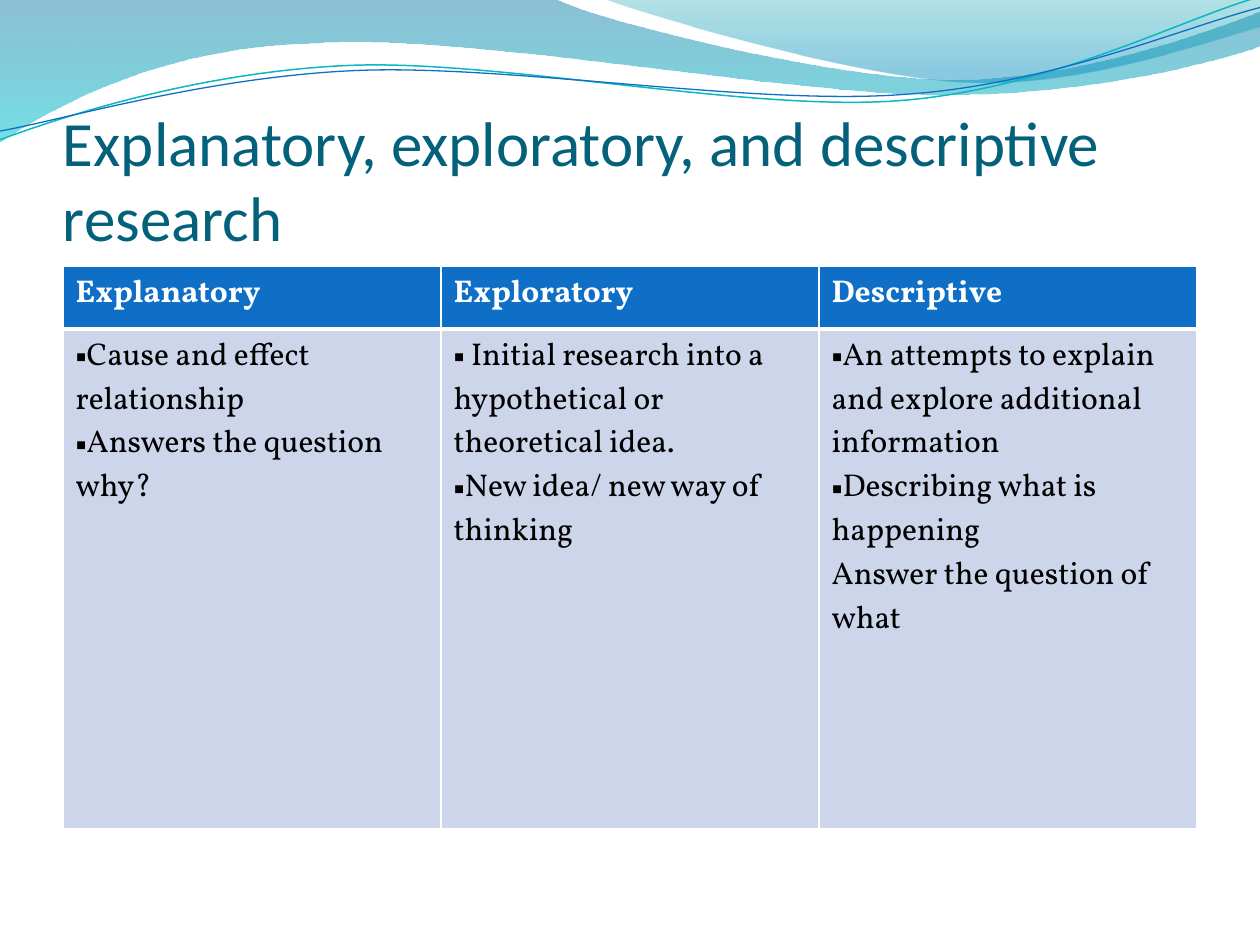
from pptx import Presentation
from pptx.dml.color import RGBColor
from pptx.enum.text import MSO_ANCHOR
from pptx.oxml.ns import qn
from pptx.util import Inches, Pt
from lxml.etree import SubElement

COLORS = {
    "title": "04617B", "header": "0F6FC6", "body": "CCD5EA",
    "white": "FFFFFF", "black": "000000",
    "deep": "0074A1", "aqua": "00C6CF", "teal": "00A1A9", "sky": "008BBF",
    "green line": "0AB8BF", "blue line": "0F6FC6",
}
COLUMNS, ROWS = 10, 7.5  # grid of one-inch squares

# Outlines: a pair is a straight step, six numbers are a Bezier curve
LEFT_WAVE = [
    (0, 0), (4.4, -0.01), (4.76, 0.17, 6.64, 0.63, 7.58, 0.63),
    (8.53, 0.63, 9.58, 0.26, 10, 0.09), (10.01, 0.36),
    (9.83, 0.44, 8.7, 0.76, 7.46, 0.75), (6.22, 0.75, 3.82, 0.28, 2.57, 0.34),
    (1.29, 0.36, 0.46, 0.83, -0.01, 1.13), (0, 0),
]
RIGHT_WAVE = [
    (4.79, -0.01), (5.09, 0.11, 6.82, 0.62, 7.69, 0.65),
    (8.56, 0.69, 9.61, 0.32, 10, 0.21), (10, 0), (4.79, -0.01),
]
GREEN_LINE = [
    (0, 1.11), (0.48, 0.93, 1.58, 0.57, 2.77, 0.52),
    (3.95, 0.47, 5.93, 0.89, 7.13, 0.8), (8.33, 0.71, 9.38, 0.15, 9.98, -0.02),
]
BLUE_LINE = [
    (0, 1.04), (0.47, 0.96, 1.64, 0.61, 2.83, 0.56),
    (4.03, 0.51, 5.97, 0.84, 7.17, 0.75), (8.36, 0.67, 9.41, 0.21, 10, 0.06),
]

# Each column: heading, then (text, has bullet) paragraphs
RESEARCH_TYPES = [
    ("Explanatory", [("Cause and effect relationship", True),
                     ("Answers the question why?", True)]),
    ("Exploratory", [(" Initial research into a hypothetical or theoretical idea. ", True),
                     ("New idea/ new way of thinking", True)]),
    ("Descriptive", [("An attempts to explain and explore additional information", True),
                     ("Describing what is happening", True),
                     ("Answer the question of what", False)]),
]


def rgb(name):
    return RGBColor.from_string(COLORS[name])


def write_text(paragraph, text, font="Vollkorn", size=18, color="black",
               bold=False, bullet=None):
    run = paragraph.add_run()
    run.text = text
    run.font.name, run.font.size, run.font.bold = font, Pt(size), bold
    run.font.color.rgb = rgb(color)
    if bullet:
        properties = paragraph._p.get_or_add_pPr()
        properties.set("marL", "0")
        properties.set("indent", "0")
        SubElement(properties, qn("a:buFont")).set("typeface", "Arial")
        SubElement(properties, qn("a:buChar")).set("char", bullet)


def bend(shape, outline):
    """Merge each run of three straight steps that stands for a curve."""
    steps = list(shape._element.iter(qn("a:lnTo")))
    for step in outline[1:]:
        first = steps.pop(0)
        if len(step) == 6:
            first.tag = qn("a:cubicBezTo")
            for other in (steps.pop(0), steps.pop(0)):
                first.append(other[0])
                other.getparent().remove(other)


class SlideBuilder:
    def __init__(self, presentation):
        self.column = presentation.slide_width / COLUMNS
        self.row = presentation.slide_height / ROWS
        self.slide = presentation.slides.add_slide(presentation.slide_layouts[6])

    def place(self, left, top, width, height):
        return (round(left * self.column), round(top * self.row),
                round(width * self.column), round(height * self.row))

    def outline(self, outline, close):
        points = [(step[index] * self.column, step[index + 1] * self.row)
                  for step in outline for index in range(0, len(step), 2)]
        builder = self.slide.shapes.build_freeform(*points[0])
        builder.add_line_segments(points[1:], close=close)
        shape = builder.convert_to_shape()
        shape.shadow.inherit = False
        bend(shape, outline)
        return shape

    def wave(self, outline, stops):
        shape = self.outline(outline, close=True)
        shape.line.fill.background()
        shape.fill.gradient()
        shape.fill.gradient_angle = 270  # top to bottom
        for stop, (position, color, opacity) in zip(shape.fill.gradient_stops, stops):
            stop.position = position
            stop.color.rgb = rgb(color)
        colors = shape._element.spPr.iter(qn("a:srgbClr"))
        for element, (position, color, opacity) in zip(list(colors), stops):
            SubElement(element, qn("a:alpha")).set("val", str(opacity * 1000))

    def curve(self, outline, color, width):
        shape = self.outline(outline, close=False)
        shape.fill.background()
        shape.line.color.rgb = rgb(color)
        shape.line.width = Pt(width)

    def title(self, text, *area):
        frame = self.slide.shapes.add_textbox(*self.place(*area)).text_frame
        frame.word_wrap = True
        frame.vertical_anchor = MSO_ANCHOR.BOTTOM
        frame.margin_left = frame.margin_right = frame.margin_bottom = 0
        frame.margin_top = Inches(0.05)
        write_text(frame.paragraphs[0], text, font="Calibri", size=36, color="title")

    def cell(self, cell, paragraphs, fill, top=1, bottom=1, **style):
        properties = cell._tc.get_or_add_tcPr()
        for side, width in (("L", 1), ("R", 1), ("T", top), ("B", bottom)):
            line = SubElement(properties, qn(f"a:ln{side}"), w=str(Pt(width)))
            solid = SubElement(line, qn("a:solidFill"))
            SubElement(solid, qn("a:srgbClr"), val=COLORS["white"])
        cell.fill.solid()
        cell.fill.fore_color.rgb = rgb(fill)
        frame = cell.text_frame
        for index, (text, has_bullet) in enumerate(paragraphs):
            paragraph = frame.add_paragraph() if index else frame.paragraphs[0]
            write_text(paragraph, text, bullet="▪" if has_bullet else None, **style)

    def table(self, columns, heights, left, top, width):
        area = self.place(left, top, width, sum(heights))
        table = self.slide.shapes.add_table(len(heights), len(columns), *area).table
        for row, height in zip(table.rows, heights):
            row.height = round(height * self.row)
        for index, (heading, paragraphs) in enumerate(columns):
            self.cell(table.cell(0, index), [(heading, False)], "header",
                      bottom=3, color="white", bold=True)
            self.cell(table.cell(1, index), paragraphs, "body", top=3)


def main():
    presentation = Presentation()
    presentation.slide_width, presentation.slide_height = Inches(10), Inches(7.5)
    builder = SlideBuilder(presentation)

    # Wave band along the top
    builder.wave(LEFT_WAVE, [(0, "deep", 45), (1, "aqua", 55)])
    builder.wave(RIGHT_WAVE, [(0, "teal", 30), (0.8, "sky", 45)])
    builder.curve(GREEN_LINE, "green line", 0.85)
    builder.curve(BLUE_LINE, "blue line", 0.75)

    # Title and comparison table
    builder.title("Explanatory, exploratory, and descriptive research", 0.5, 0.77, 9, 1.25)
    builder.table(RESEARCH_TYPES, (0.5, 3.97), 0.5, 2.11, 9)

    presentation.save("out.pptx")


if __name__ == "__main__":
    main()
